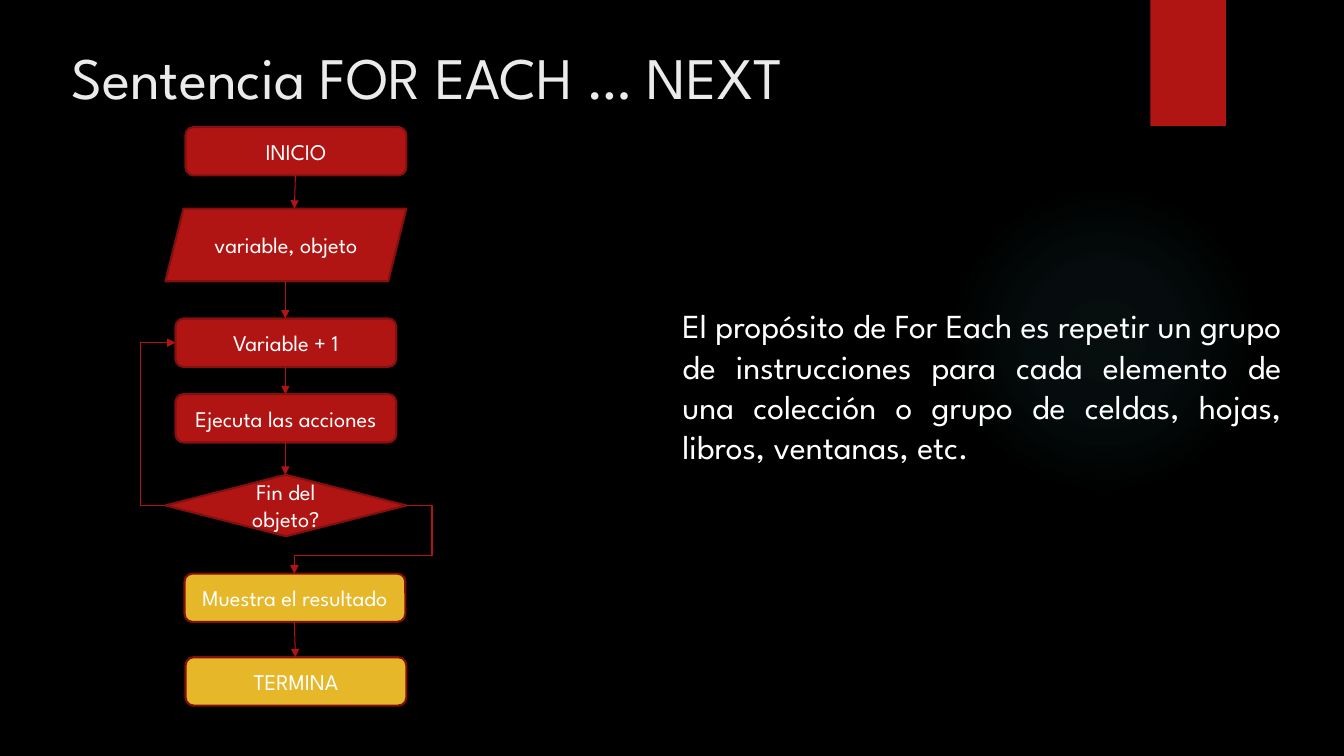
import pptx
import pptx.util
import pptx.dml.color
import pptx.enum.shapes
import pptx.enum.text
import pptx.oxml
import pptx.oxml.ns
from dataclasses import dataclass
from lxml import etree

Inches = pptx.util.Inches
Pt = pptx.util.Pt
Color = pptx.dml.color.RGBColor.from_string
Shape = pptx.enum.shapes.MSO_SHAPE
Link = pptx.enum.shapes.MSO_CONNECTOR
Align = pptx.enum.text.PP_ALIGN
Anchor = pptx.enum.text.MSO_ANCHOR
qn = pptx.oxml.ns.qn


@dataclass(frozen=True)
class Theme:
    font: str = "League Spartan"
    background: str = "000000"
    glow: str = "50B9C1"
    red: str = "B01513"
    outline: str = "82100E"
    gold: str = "E6B729"
    title: str = "EBEBEB"
    white: str = "FFFFFF"
    title_size: int = 42
    body_size: int = 24
    step_size: int = 16


theme = Theme()


def write(frame, text, size, color, align):
    para = frame.paragraphs[0]
    para.alignment = align
    span = para.add_run()
    span.text = text
    span.font.name = theme.font
    span.font.size = Pt(size)
    span.font.color.rgb = Color(color)


def add_arrow(kind, x1, y1, x2, y2):
    arrow = slide.shapes.add_connector(kind, Inches(x1), Inches(y1), Inches(x2), Inches(y2))
    arrow.line.color.rgb = Color(theme.red)
    arrow.line.width = Pt(0.75)
    etree.SubElement(arrow.line._get_or_add_ln(), qn("a:tailEnd"), type="triangle")
    etree.SubElement(arrow._element.spPr, qn("a:effectLst"))
    return arrow


deck = pptx.Presentation()
deck.slide_width = Inches(13.33)
deck.slide_height = Inches(7.5)
slide = deck.slides.add_slide(deck.slide_layouts[5])
slide.background.fill.solid()
slide.background.fill.fore_color.rgb = Color(theme.background)

# Background glow and ribbon
glow = slide.shapes.add_shape(Shape.OVAL, Inches(9.41), Inches(1.83), Inches(3.08), Inches(3.08))
glow.shadow.inherit = False
glow.line.fill.background()
glow.fill.gradient()
stops = "".join(
    f'<a:gs pos="{position * 1000}"><a:srgbClr val="{theme.glow}">'
    f'<a:alpha val="{opacity * 1000}"/></a:srgbClr></a:gs>'
    for position, opacity in [(0, 7), (36, 6), (69, 0), (100, 0)]
)
radial = pptx.oxml.parse_xml(
    f'<a:gradFill {pptx.oxml.ns.nsdecls("a")}><a:gsLst>{stops}</a:gsLst><a:path path="circle">'
    '<a:fillToRect l="50000" t="50000" r="50000" b="50000"/></a:path></a:gradFill>'
)
glow_properties = glow._element.spPr
glow_properties.replace(glow_properties.find(qn("a:gradFill")), radial)

ribbon = slide.shapes.add_shape(Shape.RECTANGLE, Inches(11.41), 0, Inches(0.75), Inches(1.25))
ribbon.shadow.inherit = False
ribbon.line.fill.background()
ribbon.fill.solid()
ribbon.fill.fore_color.rgb = Color(theme.red)

# Title and explanation
title = slide.shapes.title
title.left, title.top, title.width, title.height = map(Inches, (0.61, 0.35, 10.29, 1.53))
title.text_frame.vertical_anchor = Anchor.TOP
write(title.text_frame, "Sentencia FOR EACH … NEXT", theme.title_size, theme.title, Align.LEFT)

purpose = slide.shapes.add_textbox(Inches(6.67), Inches(2.98), Inches(6.14), Inches(2.12))
purpose.text_frame.word_wrap = True
purpose.text_frame.auto_size = pptx.enum.text.MSO_AUTO_SIZE.SHAPE_TO_FIT_TEXT
write(
    purpose.text_frame,
    "El propósito de For Each es repetir un grupo de instrucciones para cada elemento "
    "de una colección o grupo de celdas, hojas, libros, ventanas, etc.",
    theme.body_size, theme.white, Align.JUSTIFY,
)

# Flowchart steps
process = Shape.FLOWCHART_ALTERNATE_PROCESS
steps = [
    ("INICIO", process, 1.84, 1.26, 2.19, 0.48, theme.red),
    ("variable, objeto", Shape.PARALLELOGRAM, 1.64, 2.07, 2.39, 0.72, theme.red),
    ("Variable + 1", process, 1.74, 3.16, 2.19, 0.48, theme.red),
    ("Ejecuta las acciones", process, 1.74, 3.91, 2.19, 0.48, theme.red),
    ("Fin del objeto?", Shape.DIAMOND, 1.64, 4.71, 2.39, 0.61, theme.red),
    ("Muestra el resultado", process, 1.83, 5.69, 2.19, 0.48, theme.gold),
    ("TERMINA", process, 1.84, 6.52, 2.19, 0.48, theme.gold),
]
for label, kind, left, top, width, height, color in steps:
    step = slide.shapes.add_shape(kind, Inches(left), Inches(top), Inches(width), Inches(height))
    step.shadow.inherit = False
    step.fill.solid()
    step.fill.fore_color.rgb = Color(color)
    step.line.color.rgb = Color(theme.outline)
    step.line.width = Pt(1.5)
    step.text_frame.word_wrap = True
    step.text_frame.vertical_anchor = Anchor.MIDDLE
    write(step.text_frame, label, theme.step_size, theme.white, Align.CENTER)

# Arrows between consecutive steps
for x1, y1, x2, y2 in [
    (2.93, 1.74, 2.92, 2.07),
    (2.83, 2.79, 2.83, 3.16),
    (2.83, 3.64, 2.83, 3.91),
    (2.83, 4.39, 2.83, 4.71),
    (2.92, 6.17, 2.93, 6.52),
]:
    add_arrow(Link.STRAIGHT, x1, y1, x2, y2)

# Bent arrows: loop back, and exit to the result
for ends, preset, bends in [
    ((1.64, 5.02, 1.74, 3.4), "bentConnector3", [-2.5]),
    ((4.03, 5.02, 2.92, 5.69), "bentConnector4", [-0.23, 0.73]),
]:
    geometry = add_arrow(Link.ELBOW, *ends)._element.spPr.find(qn("a:prstGeom"))
    geometry.set("prst", preset)
    guides = geometry.get_or_add_avLst()
    for number, bend in enumerate(bends, 1):
        etree.SubElement(guides, qn("a:gd"), name=f"adj{number}", fmla=f"val {round(bend * 100000)}")

deck.save("out.pptx")
